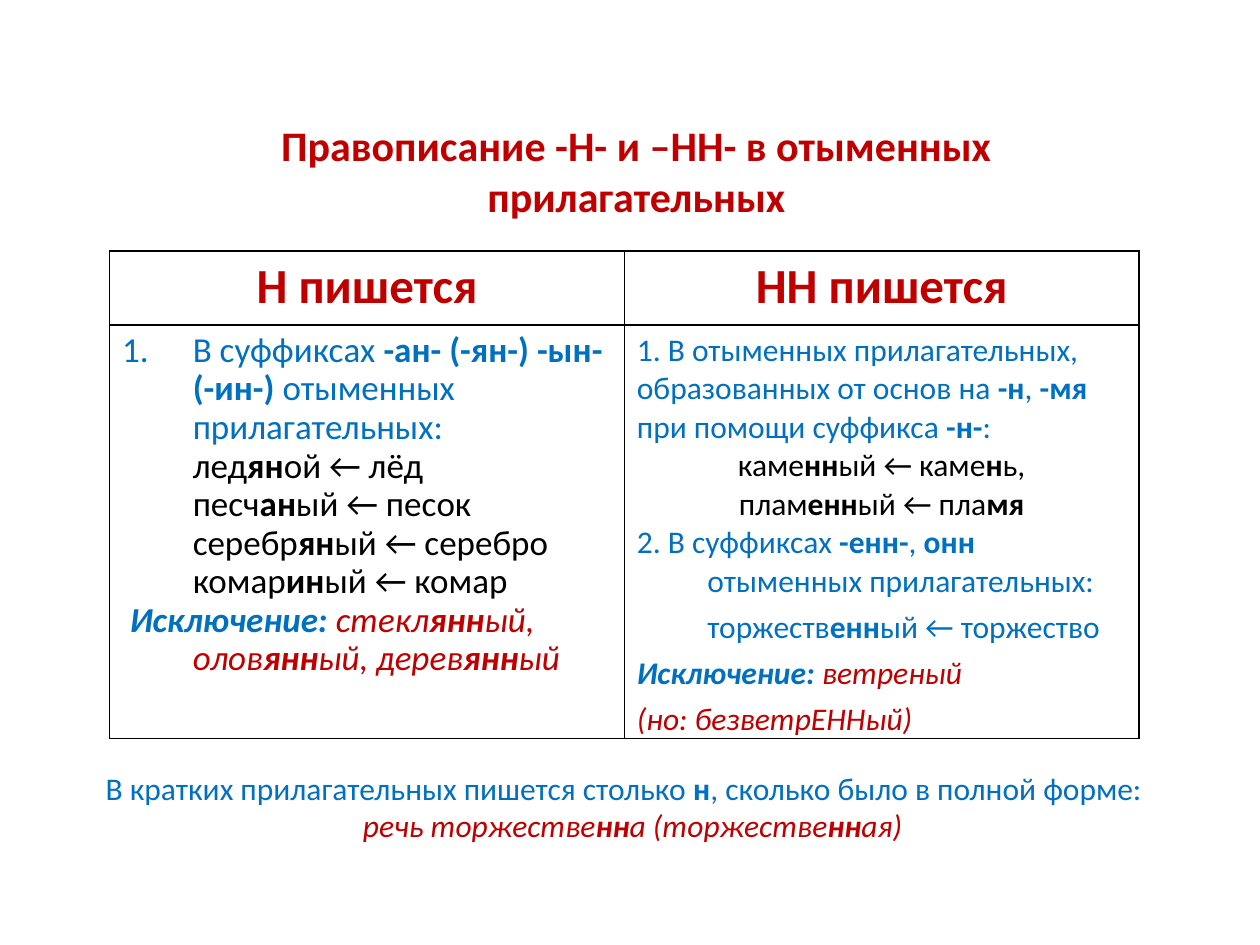
from lxml.etree import SubElement
from pptx import Presentation
from pptx.dml.color import RGBColor
from pptx.enum.text import MSO_ANCHOR, MSO_AUTO_SIZE, PP_ALIGN
from pptx.oxml.ns import qn
from pptx.util import Inches, Pt

RED, BLUE, BLACK = "C00000", "0070C0", "000000"
HANG = {"left": 0.56, "first": -0.56}
BLOCK = {"left": 0.56, "first": 0}

N_RULES = [
    ([("В суффиксах *-ан- (-ян-) -ын- (-ин-)* отыменных прилагательных:", BLUE, False)],
     {**HANG, "numbered": True}),
    *[([(text, BLACK, False)], BLOCK) for text in (
        "лед*ян*ой ← лёд", "песч*ан*ый ← песок",
        "серебр*ян*ый ← серебро", "комар*ин*ый ← комар")],
    ([("*Исключение:* ", BLUE, True),
      ("стекл*янн*ый, олов*янн*ый, дерев*янн*ый", RED, True)],
     {"left": 0.56, "first": -0.5}),
]
NN_RULES = [
    *[([(text, BLUE, False)], HANG) for text in (
        "1. В отыменных прилагательных,",
        "образованных от основ на *-н*, *-мя*",
        "при помощи суффикса *-н-*:")],
    *[([(text, BLACK, False)], {**HANG, "align": PP_ALIGN.CENTER}) for text in (
        "каме*нн*ый ← каме*н*ь,", "плам*енн*ый ← пла*мя*")],
    ([("2. В суффиксах *-енн-*, *онн* отыменных прилагательных:", BLUE, False)], HANG),
    ([("торжеств*енн*ый ← торжество", BLUE, False)], {**BLOCK, "spacing": 1.2}),
    ([("*Исключение:* ", BLUE, True), ("ветреный", RED, True)],
     {**HANG, "spacing": 1.2}),
    ([("(но: безветрЕННый)", RED, True)], {**HANG, "spacing": 1.2}),
]
SHORT_FORMS = [
    ([("В кратких прилагательных пишется столько *н*, сколько было в полной форме:",
       BLUE, False)], {}),
    ([("речь торжестве*нн*а (торжестве*нн*ая)", RED, True)],
     {"align": PP_ALIGN.CENTER}),
]


def color(value):
    return RGBColor.from_string(value)


def add_runs(p, text, size, hex_color, italic):
    for i, part in enumerate(text.split("*")):
        if not part:
            continue
        r = p.add_run()
        r.text = part
        formats = {"name": "Calibri", "size": Pt(size), "bold": i % 2 == 1,
                   "italic": italic}
        for name, value in formats.items():
            setattr(r.font, name, value)
        r.font.color.rgb = color(hex_color)


def format_paragraph(p, layout, spacing):
    pPr = p._p.get_or_add_pPr()
    if "left" in layout:
        pPr.set("marL", str(Inches(layout["left"])))
        pPr.set("indent", str(Inches(layout["first"])))
    if layout.get("numbered"):
        SubElement(pPr, qn("a:buFont"), typeface="+mj-lt")
        SubElement(pPr, qn("a:buAutoNum"), type="arabicPeriod")
    formats = {"alignment": layout.get("align", PP_ALIGN.LEFT),
               "line_spacing": layout.get("spacing", spacing),
               "space_before": Pt(0)}
    for name, value in formats.items():
        setattr(p, name, value)


def fill_text(tf, paragraphs, size, spacing=1.0):
    for i, (pieces, layout) in enumerate(paragraphs):
        p = tf.paragraphs[0] if i == 0 else tf.add_paragraph()
        format_paragraph(p, layout, spacing)
        for text, hex_color, italic in pieces:
            add_runs(p, text, size, hex_color, italic)


def format_frame(tf):
    formats = {"word_wrap": True, "vertical_anchor": MSO_ANCHOR.TOP,
               "auto_size": MSO_AUTO_SIZE.SHAPE_TO_FIT_TEXT}
    for name, value in formats.items():
        setattr(tf, name, value)


def format_cell(cell):
    tcPr = cell._tc.get_or_add_tcPr()
    for side in ("lnL", "lnR", "lnT", "lnB"):
        ln = SubElement(tcPr, qn(f"a:{side}"), w=str(Pt(1)))
        SubElement(SubElement(ln, qn("a:solidFill")), qn("a:srgbClr"), val=BLACK)
    cell.fill.background()


def heading(text):
    return [([(f"*{text}*", RED, False)], {"align": PP_ALIGN.CENTER})]


def place_title(s, left, top, width, height):
    sp = s.shapes.title
    box = {"left": left, "top": top, "width": width, "height": height}
    for name, value in box.items():
        setattr(sp, name, Inches(value))
    format_frame(sp.text_frame)
    fill_text(sp.text_frame,
              heading("Правописание -Н- и –НН- в отыменных прилагательных"), 24)


def add_rules_table(s, left, top, width, height):
    frame = s.shapes.add_table(2, 2, *map(Inches, (left, top, width, height)))
    table = frame.table
    table.first_row = table.horz_banding = False
    header = 0.59
    for row, row_height in zip(table.rows, (header, height - header)):
        row.height = Inches(row_height)
    columns = (("Н пишется", N_RULES, 20, 0.9), ("НН пишется", NN_RULES, 18, 1.0))
    for col, (title, rules, size, spacing) in enumerate(columns):
        table.columns[col].width = Inches(width / 2)
        head, body = table.cell(0, col), table.cell(1, col)
        for cell in (head, body):
            format_cell(cell)
        fill_text(head.text_frame, heading(title), 28)
        fill_text(body.text_frame, rules, size, spacing)


def add_short_forms(s, left, top, width, height):
    tf = s.shapes.add_textbox(*map(Inches, (left, top, width, height))).text_frame
    format_frame(tf)
    fill_text(tf, SHORT_FORMS, 18)


def main():
    prs = Presentation()
    prs.slide_width, prs.slide_height = Inches(10), Inches(7.5)
    s = prs.slides.add_slide(prs.slide_layouts[5])
    place_title(s, 1.29, 0.9, 7.52, 0.91)
    add_rules_table(s, 0.87, 1.99, 8.17, 3.84)
    add_short_forms(s, 0.74, 6.05, 8.56, 0.71)
    prs.save("out.pptx")


if __name__ == "__main__":
    main()
